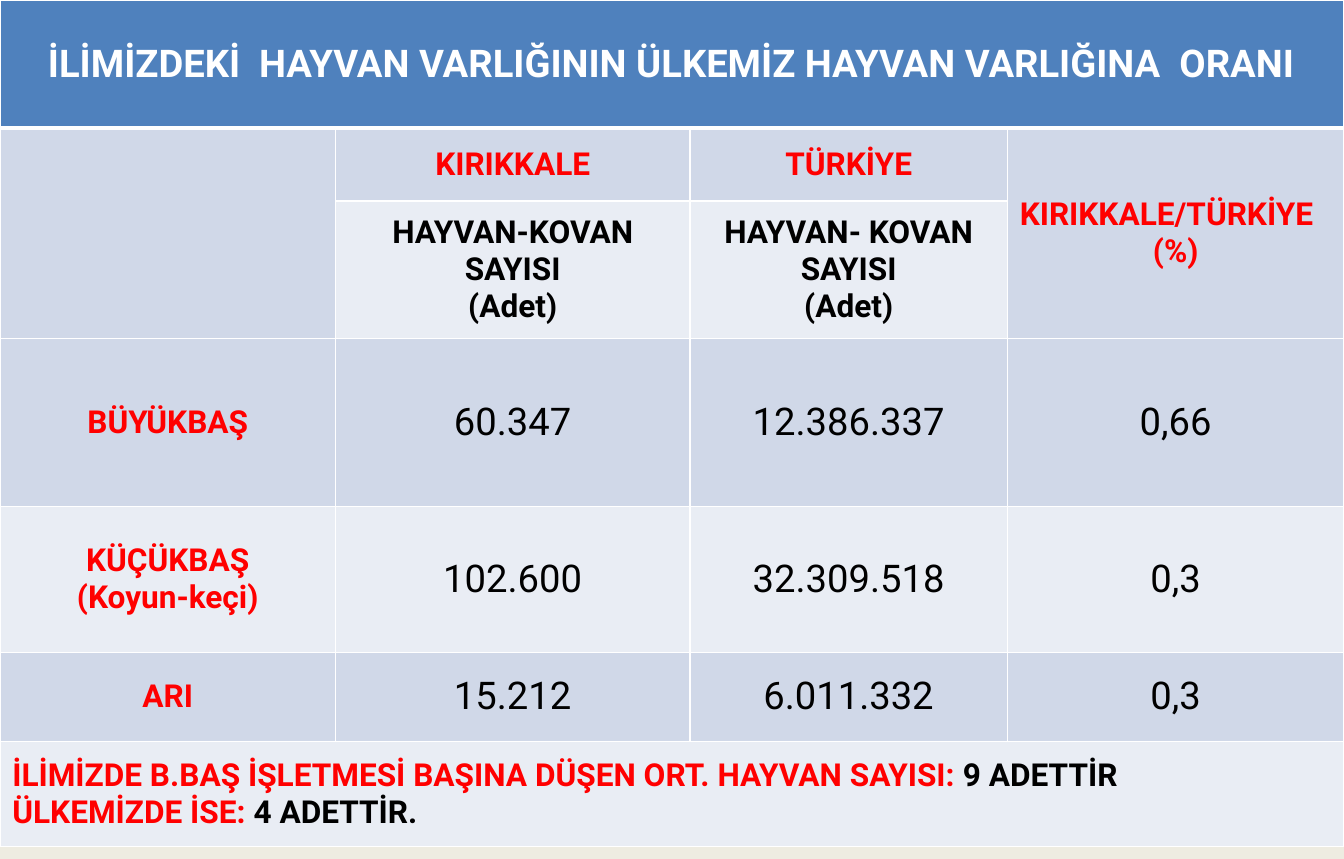
from dataclasses import dataclass

from lxml import etree
from pptx import Presentation
from pptx import util as u
from pptx.dml.color import RGBColor
from pptx.enum import text
from pptx.oxml.ns import qn

PX = 9144
SLIDE_WIDTH, SLIDE_HEIGHT = 1418, 906
COLUMN_WIDTHS = [354, 374, 335, 355]
ROW_HEIGHTS = [135, 77, 145, 177, 154, 94, 111]
LEFT, CENTER = text.PP_ALIGN.LEFT, text.PP_ALIGN.CENTER


@dataclass(frozen=True)
class Theme:
    """Colours, font and type sizes of the slide."""
    font: str = "Roboto"
    background: str = "EEECE1"
    header: str = "4F81BD"
    band_dark: str = "D0D8E8"
    band_light: str = "E9EDF4"
    white: str = "FFFFFF"
    red: str = "FF0000"
    black: str = "000000"
    large: int = 29
    normal: int = 24
    thin: int = 1
    thick: int = 3


THEME = Theme()
TITLE = "İLİMİZDEKİ  HAYVAN VARLIĞININ ÜLKEMİZ HAYVAN VARLIĞINA  ORANI"
REGIONS = [
    ("KIRIKKALE", ["HAYVAN-KOVAN SAYISI", "(Adet)"]),
    ("TÜRKİYE", ["HAYVAN- KOVAN SAYISI", "(Adet)"]),
]
RATIO_LINES = [("KIRIKKALE/TÜRKİYE", LEFT), ("(%)", CENTER)]
ANIMALS = [
    (["BÜYÜKBAŞ"], ["60.347", "12.386.337", "0,66"]),
    (["KÜÇÜKBAŞ", "(Koyun-keçi)"], ["102.600", "32.309.518", "0,3"]),
    (["ARI"], ["15.212", "6.011.332", "0,3"]),
]
AVERAGES = [
    ("İLİMİZDE B.BAŞ İŞLETMESİ BAŞINA DÜŞEN ORT. HAYVAN SAYISI: ", "9 ADETTİR"),
    ("ÜLKEMİZDE İSE: ", "4 ADETTİR."),
]


def rgb(color):
    """Turn a hex string into a colour."""
    return RGBColor.from_string(color)


def add_borders(cell, top, bottom):
    """Draw white borders around a cell, with widths in points."""
    properties = cell._tc.get_or_add_tcPr()
    sides = {"lnL": THEME.thin, "lnR": THEME.thin, "lnT": top, "lnB": bottom}
    for side, width in sides.items():
        line = etree.SubElement(properties, qn(f"a:{side}"), w=str(u.Pt(width)))
        fill = etree.SubElement(line, qn("a:solidFill"))
        etree.SubElement(fill, qn("a:srgbClr"), val=THEME.white)


def format_cell(cell, row):
    """Set the borders, band fill, margins and anchor of a cell."""
    add_borders(cell, THEME.thick if row == 1 else THEME.thin,
                THEME.thick if row == 0 else THEME.thin)
    band = THEME.band_dark if row % 2 else THEME.band_light
    cell.fill.solid()
    cell.fill.fore_color.rgb = rgb(band if row else THEME.header)
    cell.margin_left = cell.margin_right = 13 * PX
    cell.margin_top = cell.margin_bottom = 6 * PX
    cell.vertical_anchor = text.MSO_ANCHOR.MIDDLE


def next_paragraph(cell, index, size, bold, align):
    """Return the formatted paragraph at an index of a cell."""
    frame = cell.text_frame
    paragraph = frame.add_paragraph() if index else frame.paragraphs[0]
    paragraph.alignment = align
    paragraph.font.name = THEME.font
    paragraph.font.size = u.Pt(size)
    paragraph.font.bold = bold
    return paragraph


def write_lines(cell, lines, color, size=THEME.normal, bold=True):
    """Write lines of one colour, each with its alignment or centred."""
    for index, line in enumerate(lines):
        words, align = (line, CENTER) if isinstance(line, str) else line
        paragraph = next_paragraph(cell, index, size, bold, align)
        paragraph.font.color.rgb = rgb(color)
        paragraph.add_run().text = words


def write_averages(cell):
    """Write the averages as red labels with black values."""
    for index, average in enumerate(AVERAGES):
        paragraph = next_paragraph(cell, index, THEME.normal, True, LEFT)
        for words, color in zip(average, (THEME.red, THEME.black)):
            run = paragraph.add_run()
            run.text = words
            run.font.color.rgb = rgb(color)


def write_headings(table):
    """Fill the title row and the two heading rows."""
    write_lines(table.cell(0, 0), [TITLE], THEME.white, THEME.large)
    for column, (region, unit) in enumerate(REGIONS, start=1):
        write_lines(table.cell(1, column), [region], THEME.red)
        write_lines(table.cell(2, column), unit, THEME.black)
    write_lines(table.cell(1, 3), RATIO_LINES, THEME.red)


def write_animals(table):
    """Fill one row for each kind of animal."""
    for row, (labels, values) in enumerate(ANIMALS, start=3):
        write_lines(table.cell(row, 0), labels, THEME.red)
        for column, value in enumerate(values, start=1):
            write_lines(table.cell(row, column), [value], THEME.black,
                        THEME.large, bold=False)


def add_animal_table(slide, left, top):
    """Place the livestock table with its corner at the given point."""
    shape = slide.shapes.add_table(
        len(ROW_HEIGHTS), len(COLUMN_WIDTHS), left * PX, top * PX,
        sum(COLUMN_WIDTHS) * PX, sum(ROW_HEIGHTS) * PX)
    table = shape.table
    for column, width in zip(table.columns, COLUMN_WIDTHS):
        column.width = width * PX
    for index, (row, height) in enumerate(zip(table.rows, ROW_HEIGHTS)):
        row.height = height * PX
        for cell in row.cells:
            format_cell(cell, index)
    for row in (0, 6):
        table.cell(row, 0).merge(table.cell(row, 3))
    for column in (0, 3):
        table.cell(1, column).merge(table.cell(2, column))
    write_headings(table)
    write_animals(table)
    write_averages(table.cell(6, 0))


def main():
    """Build and save the slide."""
    presentation = Presentation()
    presentation.slide_width = SLIDE_WIDTH * PX
    presentation.slide_height = SLIDE_HEIGHT * PX
    slide = presentation.slides.add_slide(presentation.slide_layouts[6])
    slide.background.fill.solid()
    slide.background.fill.fore_color.rgb = rgb(THEME.background)
    add_animal_table(slide, 0, 0)
    presentation.save("out.pptx")


if __name__ == "__main__":
    main()
